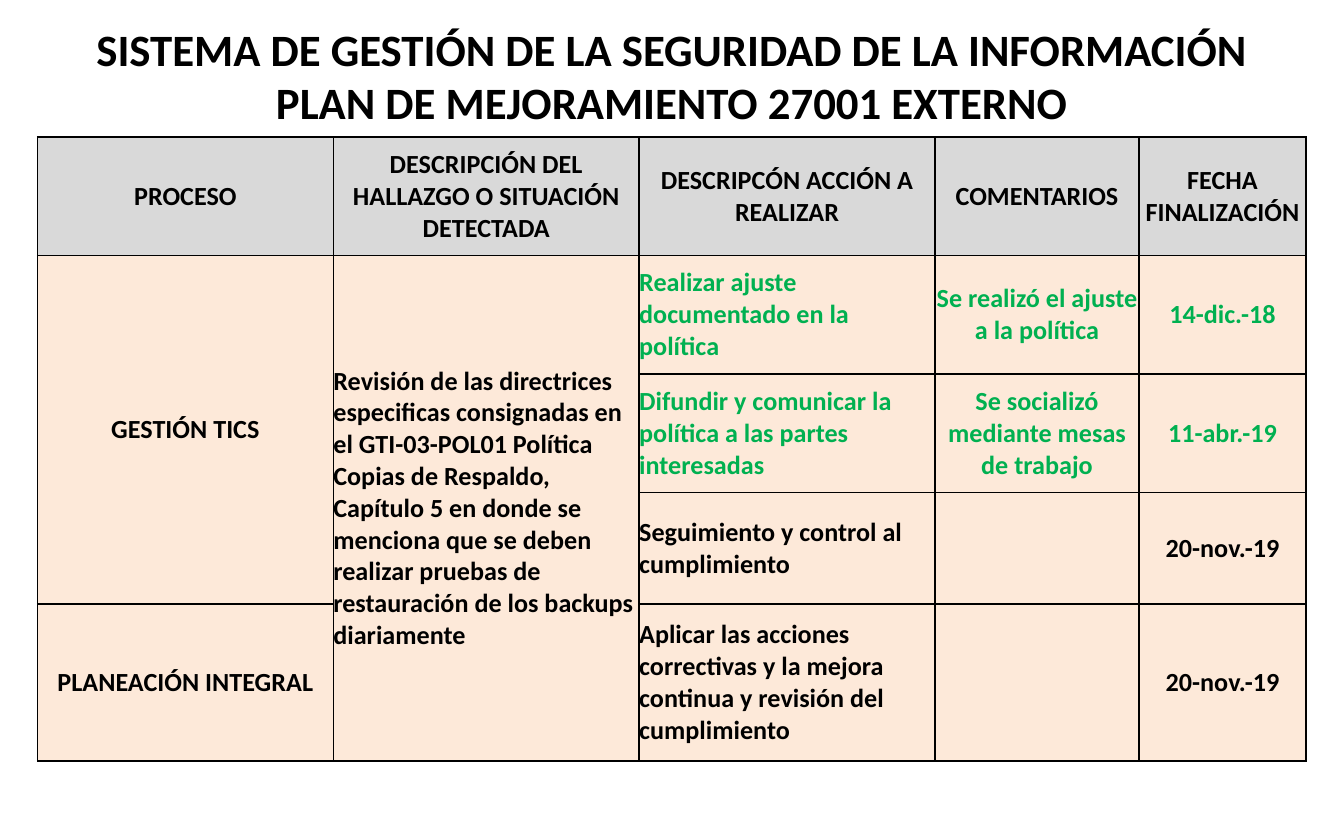
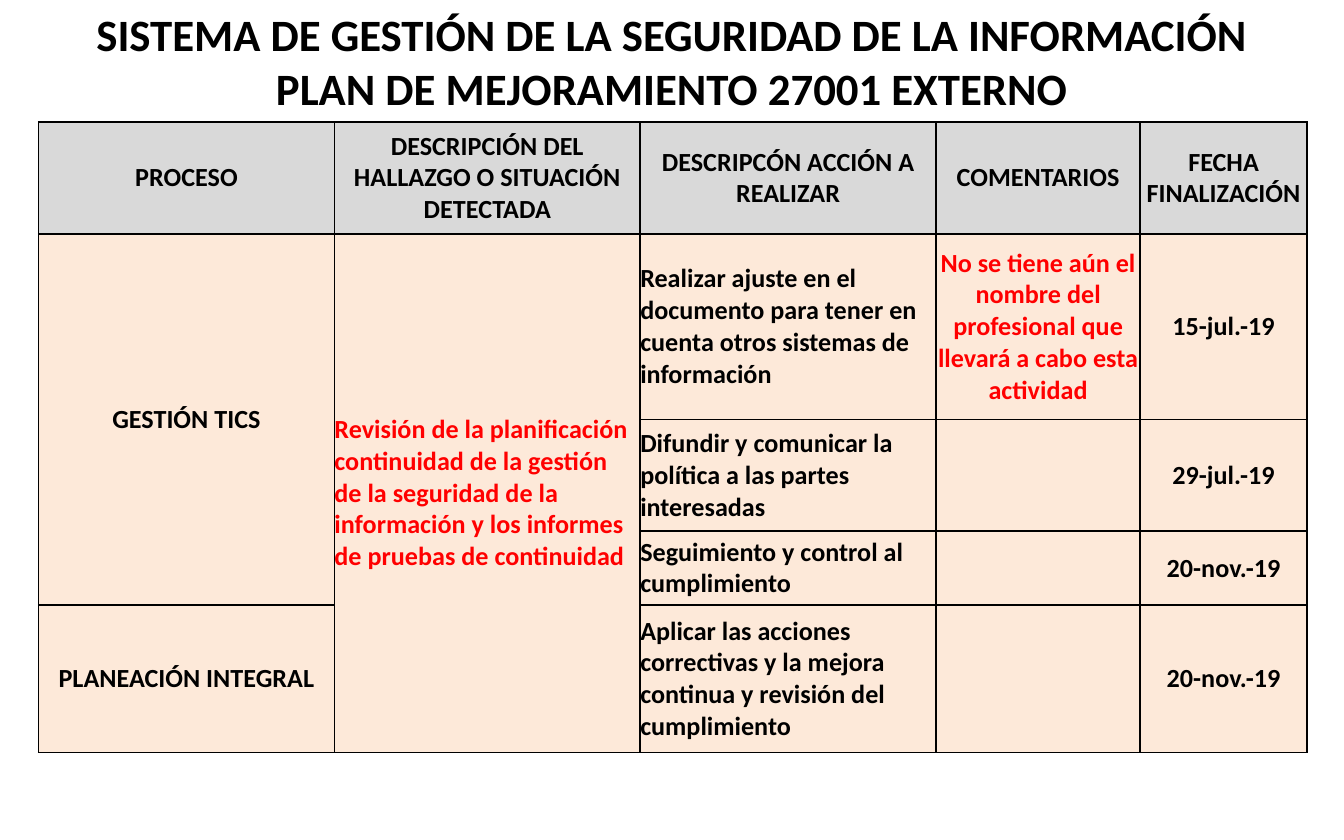
from lxml.etree import SubElement
from pptx import Presentation
from pptx.dml.color import RGBColor
from pptx.enum.text import MSO_ANCHOR, MSO_AUTO_SIZE, PP_ALIGN
from pptx.oxml.ns import qn
from pptx.util import Cm, Pt

FONT = "Calibri"
BLACK, GREEN, RED = "000000", "00B050", "FF0000"
HEADER_FILL, BODY_FILL = "D9D9D9", "FDE9D9"
TITLE = [
    "SISTEMA DE GESTIÓN DE LA SEGURIDAD DE LA INFORMACIÓN",
    "PLAN DE MEJORAMIENTO 27001 EXTERNO",
]
HEADERS = [
    "PROCESO",
    "DESCRIPCIÓN DEL HALLAZGO O SITUACIÓN DETECTADA",
    "DESCRIPCÓN ACCIÓN A REALIZAR",
    "COMENTARIOS",
    "FECHA FINALIZACIÓN",
]
SPREAD = "Difundir y comunicar la política a las partes interesadas"
FOLLOW_UP = ("Seguimiento y control al cumplimiento", "", "20-nov.-19", BLACK, BLACK)
IMPROVE = (
    "Aplicar las acciones correctivas y la mejora continua y revisión del cumplimiento",
    "", "20-nov.-19", BLACK, BLACK,
)
COLUMN_WIDTHS = [5.59, 5.78, 5.59, 3.86, 3.15]

PLANS = [
    {
        "title_top": 0.28,
        "table_at": (0.71, 2.59),
        "row_heights": [2.24, 2.24, 2.24, 2.11, 2.97],
        "finding": (
            "Revisión de las directrices especificas consignadas en el GTI-03-POL01 "
            "Política Copias de Respaldo, Capítulo 5 en donde se menciona que se deben "
            "realizar pruebas de restauración de los backups diariamente", BLACK,
        ),
        "actions": [
            ("Realizar ajuste documentado en la política",
             "Se realizó el ajuste a la política", "14-dic.-18", GREEN, GREEN),
            (SPREAD, "Se socializó mediante mesas de trabajo", "11-abr.-19", GREEN, GREEN),
            FOLLOW_UP,
            IMPROVE,
        ],
    },
    {
        "title_top": 0,
        "table_at": (0.73, 2.31),
        "row_heights": [2.11, 3.51, 2.11, 1.4, 2.79],
        "finding": (
            "Revisión de la planificación continuidad de la gestión de la seguridad de "
            "la información y los informes de pruebas de continuidad", RED,
        ),
        "actions": [
            ("Realizar ajuste en el documento para tener en cuenta otros sistemas de información",
             "No se tiene aún el nombre del profesional que llevará a cabo esta actividad",
             "15-jul.-19", BLACK, RED),
            (SPREAD, "", "29-jul.-19", BLACK, BLACK),
            FOLLOW_UP,
            IMPROVE,
        ],
    },
]


def rgb(color):
    return RGBColor.from_string(color)


def write(p, text, size, color, align):
    p.text = text
    p.alignment = align
    p.font.name = FONT
    p.font.size = Pt(size)
    p.font.bold = True
    p.font.color.rgb = rgb(color)


def add_title(s, left, top, width, height):
    sp = s.shapes.add_textbox(Cm(left), Cm(top), Cm(width), Cm(height))
    tf = sp.text_frame
    tf.word_wrap = False
    tf.auto_size = MSO_AUTO_SIZE.SHAPE_TO_FIT_TEXT
    for i, line in enumerate(TITLE):
        p = tf.add_paragraph() if i else tf.paragraphs[0]
        write(p, line, 24, BLACK, PP_ALIGN.CENTER)


def style_cell(cell, fill):
    cell.margin_left = cell.margin_right = cell.margin_top = cell.margin_bottom = 0
    cell.vertical_anchor = MSO_ANCHOR.MIDDLE
    tc_pr = cell._tc.get_or_add_tcPr()
    for side in ("lnL", "lnR", "lnT", "lnB"):
        ln = SubElement(tc_pr, qn(f"a:{side}"), w=str(Pt(1)))
        solid = SubElement(ln, qn("a:solidFill"))
        SubElement(solid, qn("a:srgbClr"), val=BLACK)
    cell.fill.solid()
    cell.fill.fore_color.rgb = rgb(fill)


def add_plan_table(s, left, top, row_heights, finding, actions):
    frame = s.shapes.add_table(
        len(row_heights), len(COLUMN_WIDTHS), Cm(left), Cm(top),
        Cm(sum(COLUMN_WIDTHS)), Cm(sum(row_heights)),
    )
    table = frame.table
    table.first_row = table.horz_banding = False
    for column, width in zip(table.columns, COLUMN_WIDTHS):
        column.width = Cm(width)
    for r, height in enumerate(row_heights):
        table.rows[r].height = Cm(height)
        for c in range(len(COLUMN_WIDTHS)):
            style_cell(table.cell(r, c), BODY_FILL if r else HEADER_FILL)

    def put(r, c, text, color=BLACK, align=PP_ALIGN.CENTER):
        write(table.cell(r, c).text_frame.paragraphs[0], text, 14, color, align)

    for c, header in enumerate(HEADERS):
        put(0, c, header)
    table.cell(1, 0).merge(table.cell(3, 0))
    table.cell(1, 1).merge(table.cell(4, 1))
    put(1, 0, "GESTIÓN TICS")
    put(4, 0, "PLANEACIÓN INTEGRAL")
    put(1, 1, *finding, PP_ALIGN.LEFT)
    for r, (action, comment, date, color, comment_color) in enumerate(actions, 1):
        put(r, 2, action, color, PP_ALIGN.LEFT)
        put(r, 3, comment, comment_color)
        put(r, 4, date, color)


def add_plan_slide(prs, plan):
    s = prs.slides.add_slide(prs.slide_layouts[6])
    add_plan_table(s, *plan["table_at"], plan["row_heights"], plan["finding"], plan["actions"])
    add_title(s, 1.47, plan["title_top"], 22.45, 2.31)


def main():
    prs = Presentation()
    prs.slide_width = Cm(25.4)
    prs.slide_height = Cm(15.88)
    for plan in PLANS:
        add_plan_slide(prs, plan)
    prs.save("out.pptx")


if __name__ == "__main__":
    main()
